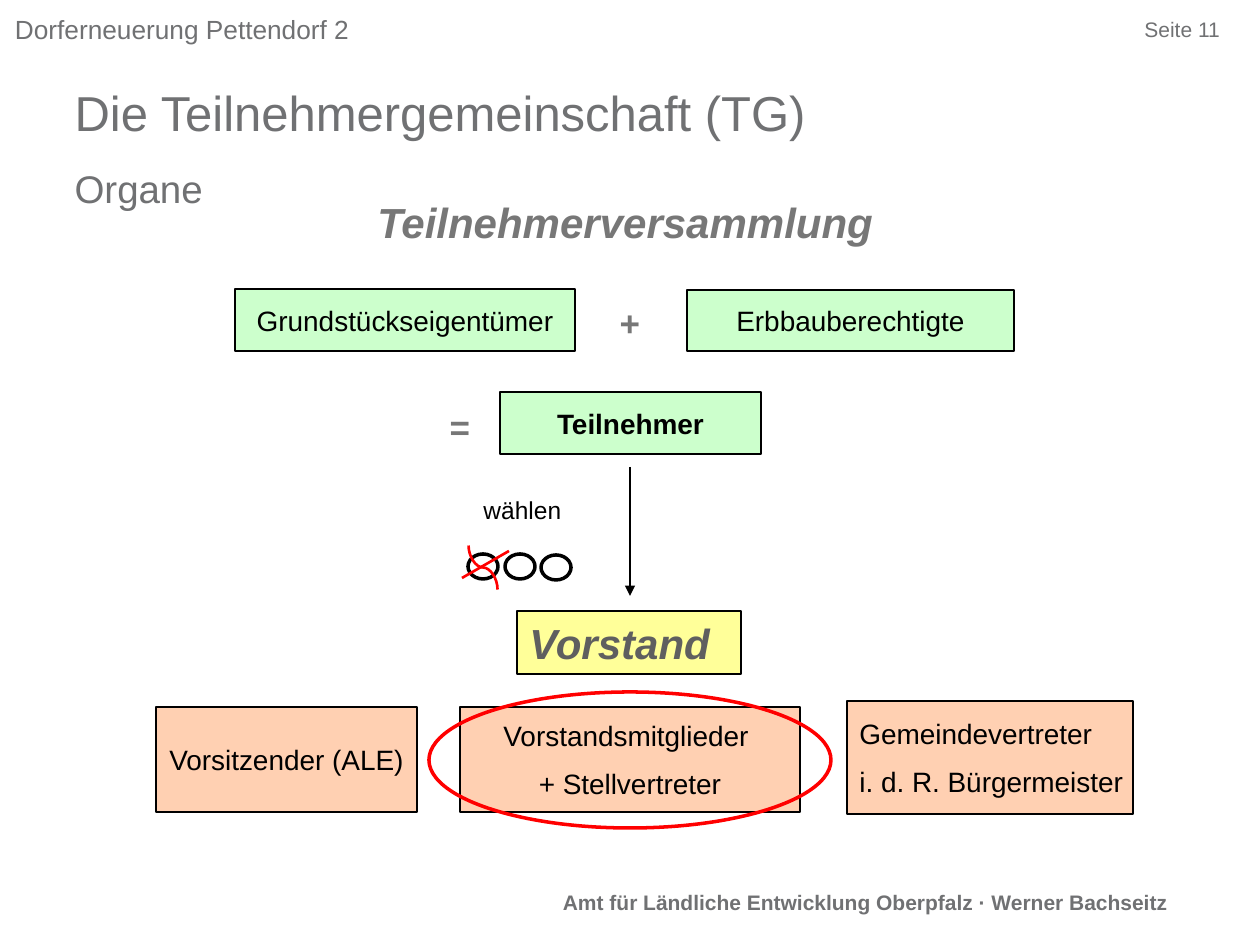
import pptx
import pptx.util
import pptx.dml.color
import pptx.enum.shapes
import pptx.enum.text
import pptx.oxml.ns
import lxml.etree

SHAPES = pptx.enum.shapes.MSO_SHAPE
CONNECTORS = pptx.enum.shapes.MSO_CONNECTOR
ALIGN = {
    "left": pptx.enum.text.PP_ALIGN.LEFT,
    "center": pptx.enum.text.PP_ALIGN.CENTER,
    "right": pptx.enum.text.PP_ALIGN.RIGHT,
}
TOP = pptx.enum.text.MSO_ANCHOR.TOP
MIDDLE = pptx.enum.text.MSO_ANCHOR.MIDDLE
FONT = "Arial"
COLORS = {
    "heading": "707173", "label": "777777", "board": "5F5F5F", "black": "000000",
    "red": "FF0000", "green": "CCFFCC", "yellow": "FFFF99", "orange": "FF6600",
}

TITLE_BOX = (62, 47, 1158, 157)
TITLE_LINES = [("Die Teilnehmergemeinschaft (TG)", 28), ("Organe", 22)]

PAGE_TEXTS = [
    ("Seite 11", (1104, 15, 116, 28), 12, "right", False),
    ("Dorferneuerung Pettendorf 2", (15, 13, 921, 49), 15, "left", False),
    ("Amt für Ländliche Entwicklung Oberpfalz · Werner Bachseitz", (193, 887, 975, 30), 12, "right", True),
]
LABELS = [
    ("wählen", (471, 489, 108, 42), 14, "left", "black", False, False),
    ("Teilnehmerversammlung", (365, 190, 529, 63), 24, "left", "label", True, True),
    ("+", (598, 295, 64, 54), 20, "center", "label", True, False),
    ("=", (428, 399, 64, 54), 20, "center", "label", True, False),
]
BOXES = [
    (["Grundstückseigentümer"], (235, 289, 340, 62), "green", "center", False),
    (["Erbbauberechtigte"], (687, 290, 327, 61), "green", "center", False),
    (["Teilnehmer"], (500, 392, 261, 62), "green", "center", True),
    (["Vorsitzender (ALE)"], (156, 707, 261, 105), "orange", "center", False),
    (["Vorstandsmitglieder ", "+ Stellvertreter"], (460, 707, 340, 105), "orange", "center", False),
    (["Gemeindevertreter", "i. d. R. Bürgermeister"], (847, 701, 286, 113), "orange", "left", False),
]
BOARD_BOX = (517, 611, 224, 63)
BOARD_RING = (429, 692, 402, 136)
BALLOT_CIRCLES = [(468, 554, 30, 25), (505, 554, 30, 25), (541, 555, 30, 25)]
ARROW = (630, 467, 630, 596)
CROSS_STROKE = (462, 578, 509, 551)
CROSS_CURVE = (505, 553, 461, 582)


def px(value):
    return pptx.util.Emu(round(value * 914400 / 126))


def color(name):
    return pptx.dml.color.RGBColor.from_string(COLORS[name])


def add_run(paragraph, text, size, color_name, bold=False, italic=False):
    run = paragraph.add_run()
    run.text = text
    run.font.name = FONT
    run.font.size = pptx.util.Pt(size)
    run.font.bold = bold
    run.font.italic = italic
    run.font.color.rgb = color(color_name)


def write(shape, lines, size, color_name, align="left", bold=False, italic=False,
          anchor=TOP, wrap=True):
    frame = shape.text_frame
    frame.word_wrap = wrap
    frame.vertical_anchor = anchor
    for index, line in enumerate(lines):
        paragraph = frame.add_paragraph() if index else frame.paragraphs[0]
        paragraph.alignment = ALIGN[align]
        if index:
            paragraph.space_before = pptx.util.Pt(8.5)
        add_run(paragraph, line, size, color_name, bold, italic)


def add_text(slide, box):
    return slide.shapes.add_textbox(*map(px, box))


def clear_margins(frame):
    frame.margin_left = frame.margin_right = frame.margin_top = frame.margin_bottom = 0


def add_outline(slide, kind, box, line_color, width, fill=None):
    shape = slide.shapes.add_shape(kind, *map(px, box))
    shape.shadow.inherit = False
    shape.line.color.rgb = color(line_color)
    shape.line.width = pptx.util.Pt(width)
    if fill:
        shape.fill.solid()
        shape.fill.fore_color.rgb = color(fill)
    else:
        shape.fill.background()
    return shape


def set_opacity(shape, percent):
    tint = shape.fill._xPr.find(".//" + pptx.oxml.ns.qn("a:srgbClr"))
    alpha = lxml.etree.SubElement(tint, pptx.oxml.ns.qn("a:alpha"))
    alpha.set("val", str(percent * 1000))


def add_line(slide, kind, ends, line_color, width):
    line = slide.shapes.add_connector(kind, *map(px, ends))
    line.line.color.rgb = color(line_color)
    line.line.width = pptx.util.Pt(width)
    lxml.etree.SubElement(line._element.spPr, pptx.oxml.ns.qn("a:effectLst"))
    return line


def add_title(slide):
    title = slide.shapes.title
    title.left, title.top, title.width, title.height = map(px, TITLE_BOX)
    frame = title.text_frame
    frame.word_wrap = True
    frame.vertical_anchor = TOP
    frame.auto_size = pptx.enum.text.MSO_AUTO_SIZE.NONE
    paragraph = frame.paragraphs[0]
    paragraph.alignment = ALIGN["left"]
    paragraph.line_spacing = 1.5
    for index, (text, size) in enumerate(TITLE_LINES):
        if index:
            paragraph.add_line_break()
        add_run(paragraph, text, size, "heading")


def add_ballot(slide):
    for circle in BALLOT_CIRCLES:
        add_outline(slide, SHAPES.OVAL, circle, "black", 2)
    add_line(slide, CONNECTORS.STRAIGHT, CROSS_STROKE, "red", 1.5)
    curve = add_line(slide, CONNECTORS.CURVE, CROSS_CURVE, "red", 1.5)
    curve._element.spPr.find(pptx.oxml.ns.qn("a:xfrm")).set("rot", str(270 * 60000))


def main():
    presentation = pptx.Presentation()
    presentation.slide_width, presentation.slide_height = px(1260), px(945)
    slide = presentation.slides.add_slide(presentation.slide_layouts[5])
    add_title(slide)

    for text, box, size, align, bold in PAGE_TEXTS:
        shape = add_text(slide, box)
        clear_margins(shape.text_frame)
        anchor = MIDDLE if align == "right" else TOP
        write(shape, [text], size, "heading", align, bold, anchor=anchor)

    for text, box, size, align, color_name, bold, italic in LABELS:
        write(add_text(slide, box), [text], size, color_name, align, bold, italic)

    for lines, box, fill, align, bold in BOXES:
        shape = add_outline(slide, SHAPES.RECTANGLE, box, "black", 0.75, fill)
        if fill == "orange":
            set_opacity(shape, 30)
        write(shape, lines, 16, "black", align, bold, anchor=MIDDLE, wrap=False)

    board = add_outline(slide, SHAPES.RECTANGLE, BOARD_BOX, "black", 0.75, "yellow")
    write(board, ["Vorstand"], 24, "board", bold=True, italic=True)
    add_outline(slide, SHAPES.OVAL, BOARD_RING, "red", 2)

    arrow = add_line(slide, CONNECTORS.STRAIGHT, ARROW, "black", 1.25)
    tail = lxml.etree.SubElement(arrow.line._get_or_add_ln(), pptx.oxml.ns.qn("a:tailEnd"))
    tail.set("type", "triangle")
    add_ballot(slide)

    presentation.save("out.pptx")


if __name__ == "__main__":
    main()
